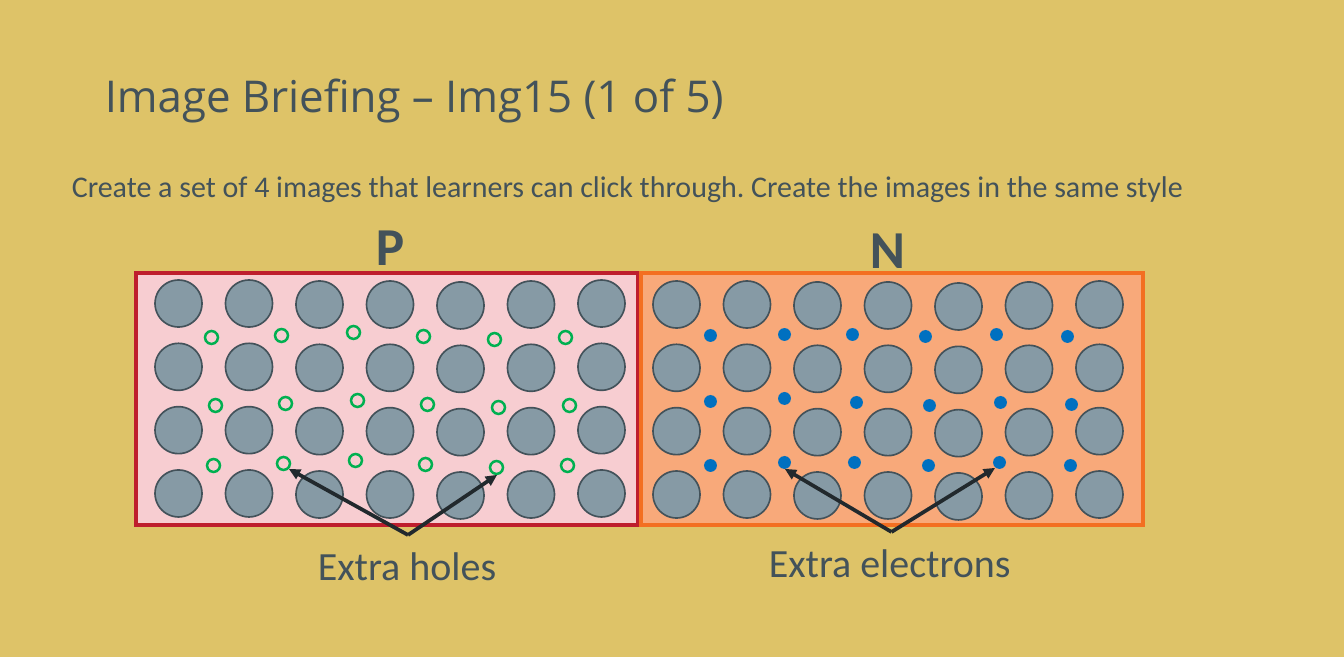
from itertools import product

from lxml.etree import SubElement
from pptx import Presentation
from pptx.dml.color import RGBColor
from pptx.enum.shapes import MSO_CONNECTOR, MSO_SHAPE
from pptx.enum.text import MSO_ANCHOR, MSO_AUTO_SIZE
from pptx.oxml.ns import qn
from pptx.util import Pt

# Content: all lengths in px
SLIDE = (1344, 657)
TITLE = ("Image Briefing – Img15 (1 of 5)", (93, 35, 1159, 127))
BRIEF = ("Create a set of 4 images that learners can click through. "
         "Create the images in the same style", (60, 162, 1266, 48))

ATOM_SIZE, ATOM_COLUMNS, ATOM_ROWS = 47, 7, 4
ATOM_SPAN = (423, 190)  # first to last atom, across and down
COLUMN_SAG = [0, 0, 1, 1, 2, 1, 0]
CARRIER_SIZE = 13

HOLE_ROW = [(205, 331), (275, 329), (347, 326), (417, 330), (488, 333), (559, 331)]
HOLE_SHIFTS = [(0, 0), (4, 68), (2, 128)]
HOLES = [(x + dx, y + dy) for (dx, dy), (x, y) in product(HOLE_SHIFTS, HOLE_ROW)]
ELECTRONS = [
    (704, 329), (778, 328), (846, 328), (919, 330), (990, 328), (1061, 330),
    (704, 395), (778, 392), (850, 396), (923, 399), (994, 396), (1065, 398),
    (704, 459), (778, 456), (848, 456), (922, 459), (993, 456), (1064, 459),
]

REGIONS = [
    {"name": "P", "name_box": (364, 206, 53, 77), "panel": (136, 273, 502, 252),
     "style": "p_panel", "first_atom": (155, 280),
     "carriers": HOLES, "carrier_style": "hole",
     "label": "Extra holes", "label_box": (306, 535, 204, 60),
     "targets": [(497, 475), (289, 469)]},
    {"name": "N", "name_box": (858, 209, 60, 77), "panel": (641, 273, 502, 252),
     "style": "n_panel", "first_atom": (653, 281),
     "carriers": ELECTRONS, "carrier_style": "electron",
     "label": "Extra electrons", "label_box": (757, 532, 269, 60),
     "targets": [(995, 468), (785, 469)]},
]

# Theme: shape styles are (fill, line colour, line width)
THEME = {
    "background": "DEC368", "text": "43525A", "arrow": ("22292D", 2.25),
    "title_font": "Open Sans", "body_font": "Calibri",
    "title_size": 26.3, "brief_size": 18, "label_size": 24, "name_size": 32,
    "p_panel": ("F7CDD1", "BE1E2D", 2.25),
    "n_panel": ("F8A97A", "F36F21", 2.25),
    "atom": ("869AA5", "43525A", 1),
    "hole": (None, "00B050", 1.5),
    "electron": ("0070C0", None, 0),
}


def px(length):
    return round(length * 7620)


def color(name):
    return RGBColor.from_string(name)


def add_figure(page, kind, box, style):
    fill, line, width = THEME[style]
    figure = page.shapes.add_shape(kind, *map(px, box))
    figure.shadow.inherit = False
    if fill:
        figure.fill.solid()
        figure.fill.fore_color.rgb = color(fill)
    else:
        figure.fill.background()
    if line:
        figure.line.color.rgb = color(line)
        figure.line.width = Pt(width)
        SubElement(figure.line._get_or_add_ln(), qn("a:miter"), lim="800000")
    else:
        figure.line.fill.background()


def add_text(page, text, box, size, font="body_font", bold=False, wrap=False):
    text_box = page.shapes.add_textbox(*map(px, box))
    frame = text_box.text_frame
    frame.word_wrap = wrap
    frame.auto_size = MSO_AUTO_SIZE.SHAPE_TO_FIT_TEXT
    para = frame.paragraphs[0]
    para.text = text
    para.font.name = THEME[font]
    para.font.size = Pt(THEME[size])
    para.font.bold = bold
    para.font.color.rgb = color(THEME["text"])
    return text_box


def add_arrow(page, label, target):
    line, width = THEME["arrow"]
    x, y = map(px, target)
    arrow = page.shapes.add_connector(MSO_CONNECTOR.STRAIGHT, x, y, x, y)
    arrow.begin_connect(label, 0)
    arrow.line.color.rgb = color(line)
    arrow.line.width = Pt(width)
    SubElement(arrow.line._get_or_add_ln(), qn("a:tailEnd"), type="triangle")
    SubElement(arrow._element.spPr, qn("a:effectLst"))


def add_region(page, region):
    add_figure(page, MSO_SHAPE.RECTANGLE, region["panel"], region["style"])

    # Lattice of atoms
    left, top = region["first_atom"]
    across = ATOM_SPAN[0] / (ATOM_COLUMNS - 1)
    down = ATOM_SPAN[1] / (ATOM_ROWS - 1)
    for column, row in product(range(ATOM_COLUMNS), range(ATOM_ROWS)):
        x = left + column * across
        y = top + row * down + COLUMN_SAG[column]
        add_figure(page, MSO_SHAPE.OVAL, (x, y, ATOM_SIZE, ATOM_SIZE), "atom")

    # Charge carriers
    for x, y in region["carriers"]:
        add_figure(page, MSO_SHAPE.OVAL, (x, y, CARRIER_SIZE, CARRIER_SIZE),
                   region["carrier_style"])

    # Name, label and arrows
    add_text(page, region["name"], region["name_box"], "name_size", bold=True)
    label = add_text(page, region["label"], region["label_box"], "label_size")
    for target in region["targets"]:
        add_arrow(page, label, target)


def main():
    deck = Presentation()
    deck.slide_width, deck.slide_height = map(px, SLIDE)
    page = deck.slides.add_slide(deck.slide_layouts[6])
    page.background.fill.solid()
    page.background.fill.fore_color.rgb = color(THEME["background"])

    # Heading
    title = add_text(page, *TITLE, "title_size", font="title_font", wrap=True)
    title.text_frame.auto_size = MSO_AUTO_SIZE.NONE
    title.text_frame.vertical_anchor = MSO_ANCHOR.MIDDLE
    title.text_frame.paragraphs[0].line_spacing = 0.9
    add_text(page, *BRIEF, "brief_size", wrap=True)

    for region in REGIONS:
        add_region(page, region)
    deck.save("out.pptx")


if __name__ == "__main__":
    main()
